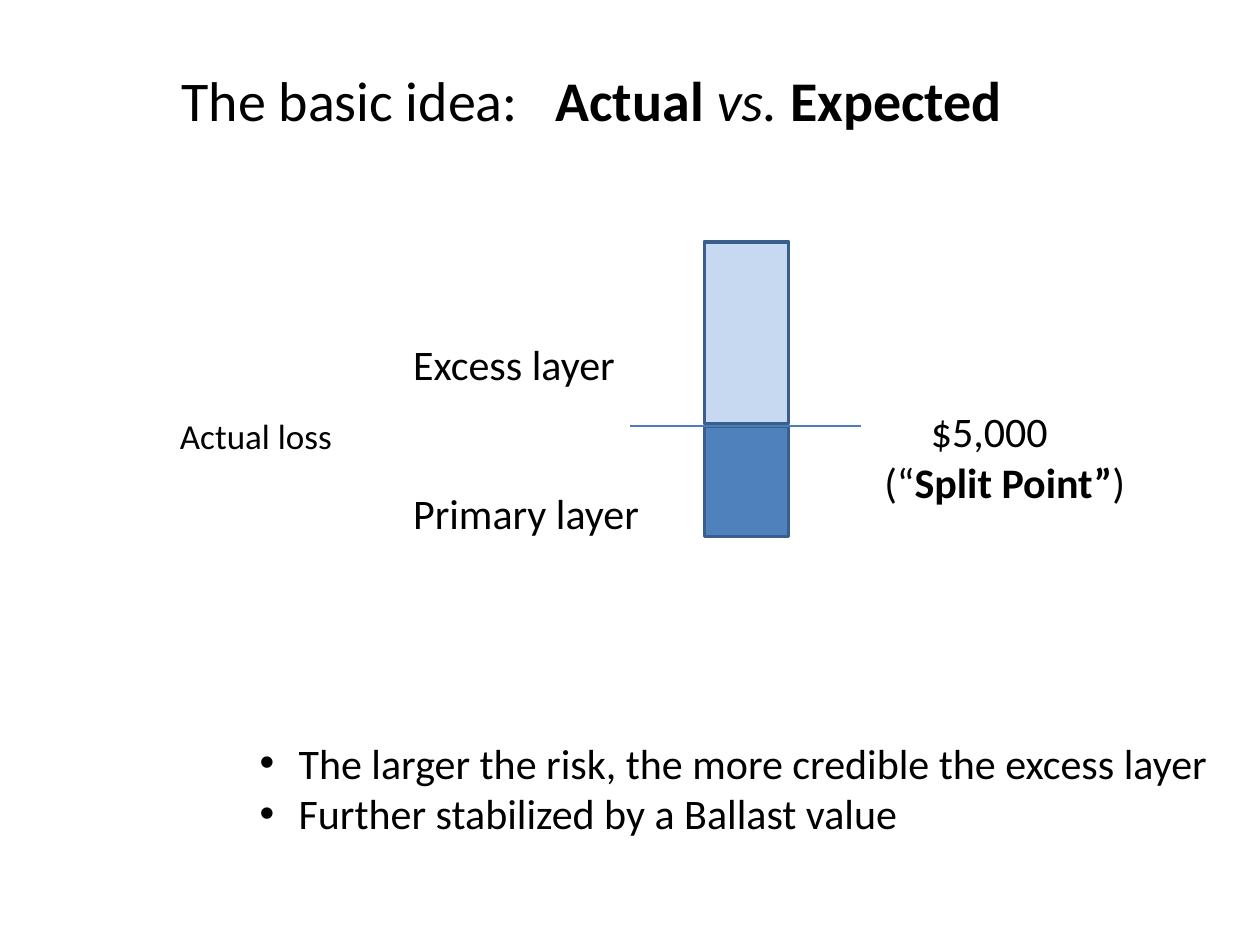
from lxml import etree
from pptx import Presentation
from pptx.dml.color import RGBColor
from pptx.enum.shapes import MSO_CONNECTOR, MSO_SHAPE
from pptx.enum.text import MSO_ANCHOR, MSO_AUTO_SIZE, PP_ALIGN
from pptx.oxml.ns import qn
from pptx.util import Inches, Pt

RECTANGLE = MSO_SHAPE.RECTANGLE
STRAIGHT = MSO_CONNECTOR.STRAIGHT
TOP = MSO_ANCHOR.TOP
NO_AUTOFIT = MSO_AUTO_SIZE.NONE
LEFT = PP_ALIGN.LEFT

BLACK = RGBColor(0x00, 0x00, 0x00)
PRIMARY_FILL = RGBColor(0x4F, 0x81, 0xBD)
EXCESS_FILL = RGBColor(0xC6, 0xD9, 0xF1)
BAR_OUTLINE = RGBColor(0x3A, 0x5F, 0x8C)
SPLIT_LINE = RGBColor(0x4B, 0x7E, 0xBC)

FONT = "Calibri"
COLUMNS, ROWS = 100, 75
SLIDE_WIDTH, SLIDE_HEIGHT = Inches(10), Inches(7.5)
BAR_LEFT, BAR_WIDTH = 55.9, 6.7
SPLIT_ROW = 33.8


def column(count):
    return round(SLIDE_WIDTH * count / COLUMNS)


def row(count):
    return round(SLIDE_HEIGHT * count / ROWS)


def box(left, top, width, height):
    return column(left), row(top), column(width), row(height)


def place(shape, left, top, width, height):
    shape.left, shape.top, shape.width, shape.height = box(left, top, width, height)


def write_runs(paragraph, runs, size):
    paragraph.alignment = LEFT
    paragraph.space_before = Pt(0)
    for text, bold, italic in runs:
        run = paragraph.add_run()
        run.text = text
        font = run.font
        font.name, font.size, font.bold, font.italic = FONT, Pt(size), bold, italic
        font.color.rgb = BLACK


def write_text(shape, paragraphs, size, wrap):
    frame = shape.text_frame
    frame.word_wrap = wrap
    frame.auto_size = NO_AUTOFIT
    frame.vertical_anchor = TOP
    for index, runs in enumerate(paragraphs):
        paragraph = frame.add_paragraph() if index else frame.paragraphs[0]
        write_runs(paragraph, runs, size)
    return frame.paragraphs


def set_indent(paragraph, margin, first_line=0):
    properties = paragraph._p.get_or_add_pPr()
    properties.set("marL", str(column(margin)))
    properties.set("indent", str(column(first_line)))


def add_tab_stop(paragraph, position):
    properties = paragraph._p.get_or_add_pPr()
    tabs = etree.SubElement(properties, qn("a:tabLst"))
    etree.SubElement(tabs, qn("a:tab"), pos=str(column(position)), algn="l")


def add_title(slide):
    title = slide.shapes.title
    place(title, 13.4, 4.7, 78, 6.4)
    runs = [("The basic idea:\t", False, False), ("Actual ", True, False),
            ("vs.", False, True), (" Expected", True, False)]
    paragraphs = write_text(title, [runs], 32, True)
    add_tab_stop(paragraphs[0], 29.7)


def add_bullets(slide, lines):
    body = slide.placeholders[1]
    place(body, 19.6, 58, 78, 9.1)
    paragraphs = write_text(body, [[(line, False, False)] for line in lines], 24, True)
    for paragraph in paragraphs:
        set_indent(paragraph, 3.1, -3.1)


def add_label(slide, position, paragraphs, size=24):
    label = slide.shapes.add_textbox(*box(*position))
    return write_text(label, paragraphs, size, False)


def add_layer(slide, top, height, fill):
    layer = slide.shapes.add_shape(RECTANGLE, *box(BAR_LEFT, top, BAR_WIDTH, height))
    layer.shadow.inherit = False
    layer.fill.solid()
    layer.fill.fore_color.rgb = fill
    layer.line.color.rgb = BAR_OUTLINE
    layer.line.width = Pt(2)


def add_split_line(slide):
    line = slide.shapes.add_connector(
        STRAIGHT, column(50), row(SPLIT_ROW), column(68.3), row(SPLIT_ROW))
    line.line.color.rgb = SPLIT_LINE
    line.line.width = Pt(0.75)
    etree.SubElement(line._element.spPr, qn("a:effectLst"))


def main():
    presentation = Presentation()
    presentation.slide_width = SLIDE_WIDTH
    presentation.slide_height = SLIDE_HEIGHT
    slide = presentation.slides.add_slide(presentation.slide_layouts[1])

    add_title(slide)
    add_label(slide, (13.3, 32.4, 14.2, 4.4), [[("Actual loss", False, False)]], 20)
    add_layer(slide, SPLIT_ROW, 8.8, PRIMARY_FILL)
    add_split_line(slide)
    add_layer(slide, 19.2, 14.4, EXCESS_FILL)
    split_point = add_label(slide, (69.2, 31.7, 21.3, 9.1), [
        [("$5,000", False, False)],
        [("(“", False, False), ("Split Point”", True, False), (")", False, False)],
    ])
    set_indent(split_point[0], 3.7)
    add_label(slide, (31.8, 26.4, 18.2, 5), [[("Excess layer", False, False)]])
    add_label(slide, (31.8, 38.2, 20.1, 5), [[("Primary layer", False, False)]])
    add_bullets(slide, ["The larger the risk, the more credible the excess layer",
                        "Further stabilized by a Ballast value"])

    presentation.save("out.pptx")


if __name__ == "__main__":
    main()
